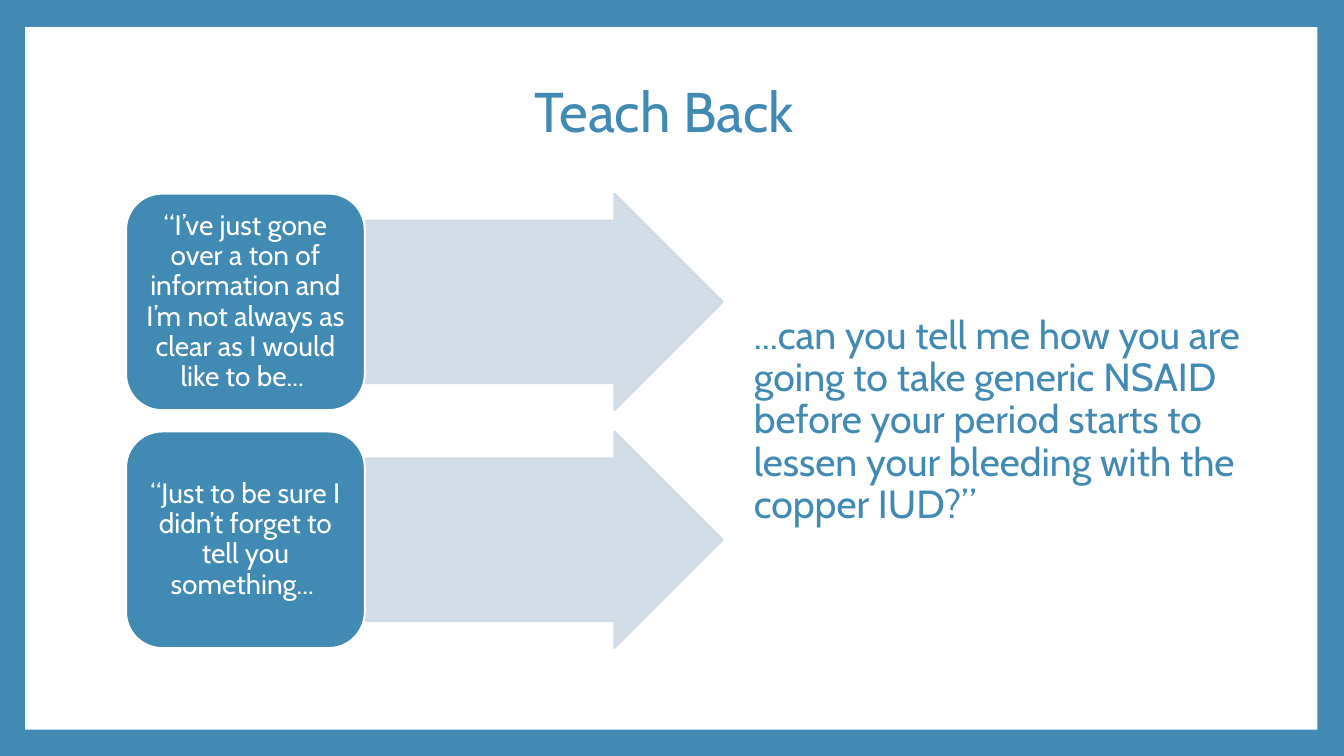
"""Build the Teach Back slide: two prompts with arrows leading to one question."""
from typing import Any, NamedTuple

from lxml import etree
from pptx import Presentation
from pptx.dml import color
from pptx.enum import shapes, text
from pptx.oxml import ns
from pptx.util import Pt

BLUE, PALE, WHITE = "418AB3", "CFDAE5", "FFFFFF"
KIND = shapes.MSO_SHAPE
ALIGN = text.PP_ALIGN


class Box(NamedTuple):
    left: float
    top: float
    width: float
    height: float


class Prompt(NamedTuple):
    words: str
    top: float


PROMPTS = [
    Prompt("“I’ve just gone over a ton of information and I’m not always "
           "as clear as I would like to be... ", 138.24),
    Prompt("“Just to be sure I didn’t forget to tell you something... ", 308.16),
]


def tint(part: Any, shade: str) -> None:
    part.rgb = color.RGBColor.from_string(shade)


def apply(item: Any, values: dict[str, Any]) -> None:
    for name, value in values.items():
        setattr(item, name, value)


def place(shape: Any, box: Box) -> None:
    apply(shape, {name: Pt(value) for name, value in box._asdict().items()})


def fade(shape: Any, percent: int) -> None:
    for shade in shape.element.spPr.iter(ns.qn("a:srgbClr")):
        etree.SubElement(shade, ns.qn("a:alpha"), val=str(percent * 1000))


def draw(slide: Any, kind: Any, box: Box, fill: str, line: str | None = None) -> Any:
    shape = slide.shapes.add_shape(kind, *map(Pt, box))
    shape.shadow.inherit = False
    shape.fill.solid()
    tint(shape.fill.fore_color, fill)
    if line:
        tint(shape.line.color, line)
        shape.line.width = Pt(1.5)
    else:
        shape.line.fill.background()
    return shape


def write(shape: Any, words: str, size: float, shade: str, align: Any,
          anchor: Any, sides: tuple[float, float], ends: float,
          after: float = 0) -> None:
    frame = shape.text_frame
    apply(frame, {
        "word_wrap": True, "vertical_anchor": anchor,
        "margin_left": Pt(sides[0]), "margin_right": Pt(sides[1]),
        "margin_top": Pt(ends), "margin_bottom": Pt(ends),
    })
    para = frame.paragraphs[0]
    apply(para, {"alignment": align, "line_spacing": 0.9,
                 "space_before": Pt(0), "space_after": Pt(after)})
    run = para.add_run()
    run.text = words
    apply(run.font, {"name": "Cabin", "size": Pt(size)})
    tint(run.font.color, shade)


def main() -> None:
    deck = Presentation()
    apply(deck, {"slide_width": Pt(960), "slide_height": Pt(540)})
    slide = deck.slides.add_slide(deck.slide_layouts[5])
    slide.background.fill.solid()
    tint(slide.background.fill.fore_color, BLUE)

    title = slide.shapes.title
    panel = draw(slide, KIND.RECTANGLE, Box(18, 19.44, 923.04, 501.84), WHITE)
    title.element.addprevious(panel.element)
    place(title, Box(90, 30.96, 777.6, 101.52))
    middle = text.MSO_ANCHOR.MIDDLE
    write(title, "Teach Back ", 40, BLUE, ALIGN.CENTER, middle, (7.2, 7.2), 3.6)

    for prompt in PROMPTS:
        arrow = draw(slide, KIND.RIGHT_ARROW,
                     Box(260.64, prompt.top, 255.6, 154.8), PALE, PALE)
        arrow.adjustments[0] = 0.75
        fade(arrow, 90)
        card = draw(slide, KIND.ROUNDED_RECTANGLE,
                    Box(90, prompt.top, 170.64, 154.8), BLUE, WHITE)
        write(card, prompt.words, 20, WHITE, ALIGN.CENTER, middle,
              (5.76, 5.76), 2.88, 7)

    ask = slide.shapes.add_textbox(*map(Pt, Box(527.76, 221.76, 374.4, 162)))
    write(ask, "...can you tell me how you are going to take generic NSAID "
          "before your period starts to lessen your bleeding with the copper IUD?”",
          28, BLUE, ALIGN.LEFT, text.MSO_ANCHOR.TOP, (10.8, 7.2), 3.6)
    deck.save("out.pptx")


if __name__ == "__main__":
    main()
